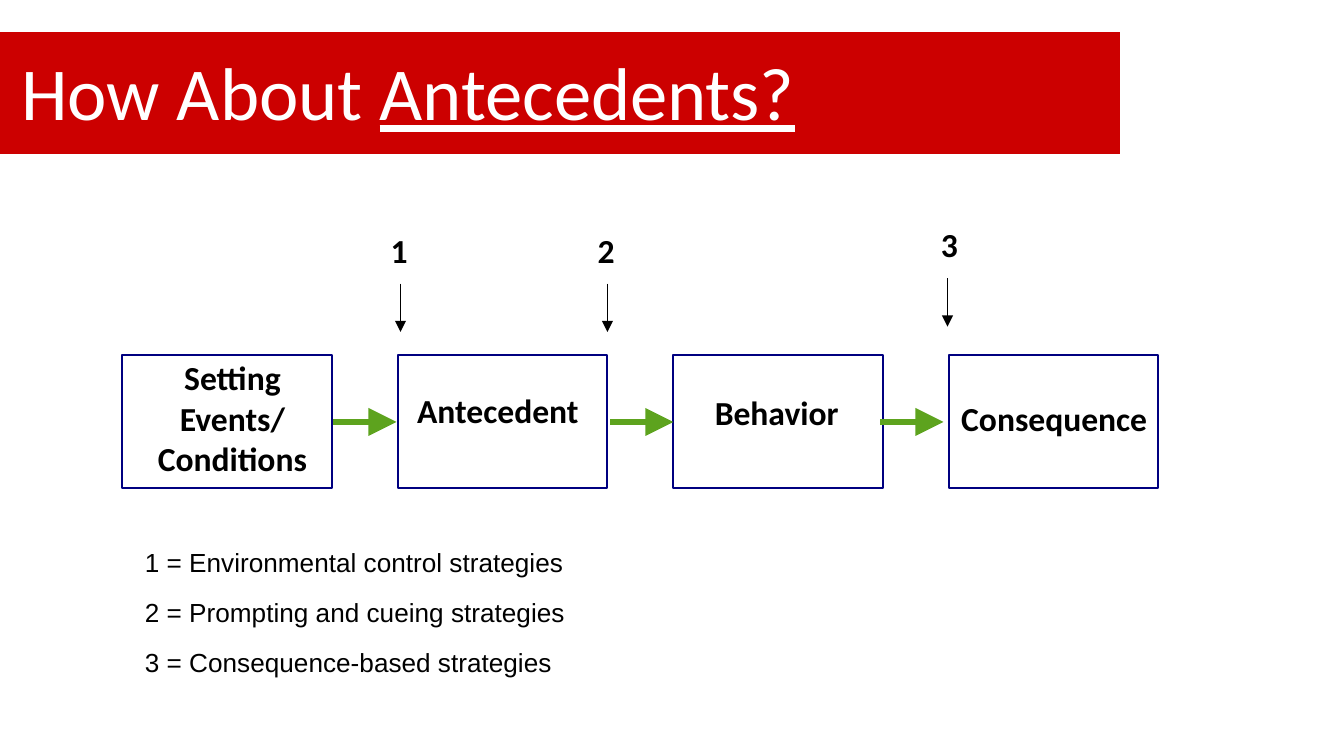
import pptx
import pptx.dml.color
import pptx.enum.shapes
import pptx.enum.text
import pptx.oxml.ns
import pptx.util
from lxml import etree
from pptx.util import Inches

COLORS = {
    "banner": "CC0000",
    "white": "FFFFFF",
    "black": "000000",
    "box": "000080",
    "chain": "5DA31E",
}


def rgb(name):
    return pptx.dml.color.RGBColor.from_string(COLORS[name])


def add_text(slide, text, left, top, width, height, size=18, font="Calibri",
             color="black", bold=False, center=False, middle=False, underlined=""):
    frame = slide.shapes.add_textbox(
        Inches(left), Inches(top), Inches(width), Inches(height)).text_frame
    frame.word_wrap = True
    if middle:
        frame.vertical_anchor = pptx.enum.text.MSO_ANCHOR.MIDDLE
    for index, line in enumerate(text.split("\n")):
        paragraph = frame.paragraphs[0] if index == 0 else frame.add_paragraph()
        if center:
            paragraph.alignment = pptx.enum.text.PP_ALIGN.CENTER
        for words, underline in ((line, None), (underlined, True)):
            if words:
                run = paragraph.add_run()
                run.text = words
                run.font.name = font
                run.font.size = pptx.util.Pt(size)
                run.font.bold = bold
                run.font.underline = underline
                run.font.color.rgb = rgb(color)


def add_box(slide, left, top, width, height, line, weight, fill=None):
    box = slide.shapes.add_shape(
        pptx.enum.shapes.MSO_SHAPE.RECTANGLE,
        Inches(left), Inches(top), Inches(width), Inches(height))
    box.shadow.inherit = False
    if fill:
        box.fill.solid()
        box.fill.fore_color.rgb = rgb(fill)
    else:
        box.fill.background()
    box.line.color.rgb = rgb(line)
    box.line.width = pptx.util.Pt(weight)


def add_arrow(slide, start, end, color, weight, head="med"):
    arrow = slide.shapes.add_connector(
        pptx.enum.shapes.MSO_CONNECTOR.STRAIGHT,
        Inches(start[0]), Inches(start[1]), Inches(end[0]), Inches(end[1]))
    arrow.line.color.rgb = rgb(color)
    arrow.line.width = pptx.util.Pt(weight)
    qn = pptx.oxml.ns.qn
    etree.SubElement(arrow.line._get_or_add_ln(), qn("a:tailEnd"),
                     type="triangle", w=head, len=head)
    etree.SubElement(arrow._element.spPr, qn("a:effectLst"))


def add_title(slide):
    add_box(slide, -0.08, 0.23, 8.42, 0.92, "white", 0.75, fill="banner")
    add_text(slide, "How About ", 0.06, 0.27, 8.73, 0.81, size=40,
             color="white", middle=True, underlined="Antecedents?")


def add_chain(slide):
    stages = [
        ("Setting Events/\nConditions", 0.98, 2.61, 1.5, 1),
        ("Antecedent", 2.87, 2.85, 1.67, 0.77),
        ("Behavior", 5.03, 2.87, 1.5, 0.77),
        ("Consequence", 6.93, 2.91, 1.83, 0.77),
    ]
    for index, (label, *place) in enumerate(stages):
        add_box(slide, 0.91 + 2.05 * index, 2.64, 1.56, 0.99, "box", 1)
        add_text(slide, label, *place, bold=True, center=True)
    for left in (2.48, 4.54, 6.55):
        add_arrow(slide, (left, 3.14), (left + 0.47, 3.14), "chain", 3, head="lg")


def add_strategies(slide):
    strategies = [
        ("Environmental control strategies", 2.98, 2.72, 1.66, 0.5),
        ("Prompting and cueing strategies", 4.52, 4.26, 1.66, 0.5),
        ("Consequence-based strategies", 7.05, 6.83, 1.62, 0.47),
    ]
    for number, (strategy, arrow_x, left, top, width) in enumerate(strategies, 1):
        add_text(slide, str(number), left, top, width, 0.44, bold=True, center=True)
        add_arrow(slide, (arrow_x, top + 0.45), (arrow_x, top + 0.81), "black", 0.75)
        add_text(slide, f"{number} = {strategy}", 0.98, 3.65 + 0.37 * number,
                 3.94, 0.34, size=14, font="Arial")


def main():
    deck = pptx.Presentation()
    deck.slide_width = Inches(10)
    deck.slide_height = Inches(10) * 9 // 16
    slide = deck.slides.add_slide(deck.slide_layouts[6])
    add_title(slide)
    add_chain(slide)
    add_strategies(slide)
    deck.save("out.pptx")


if __name__ == "__main__":
    main()
